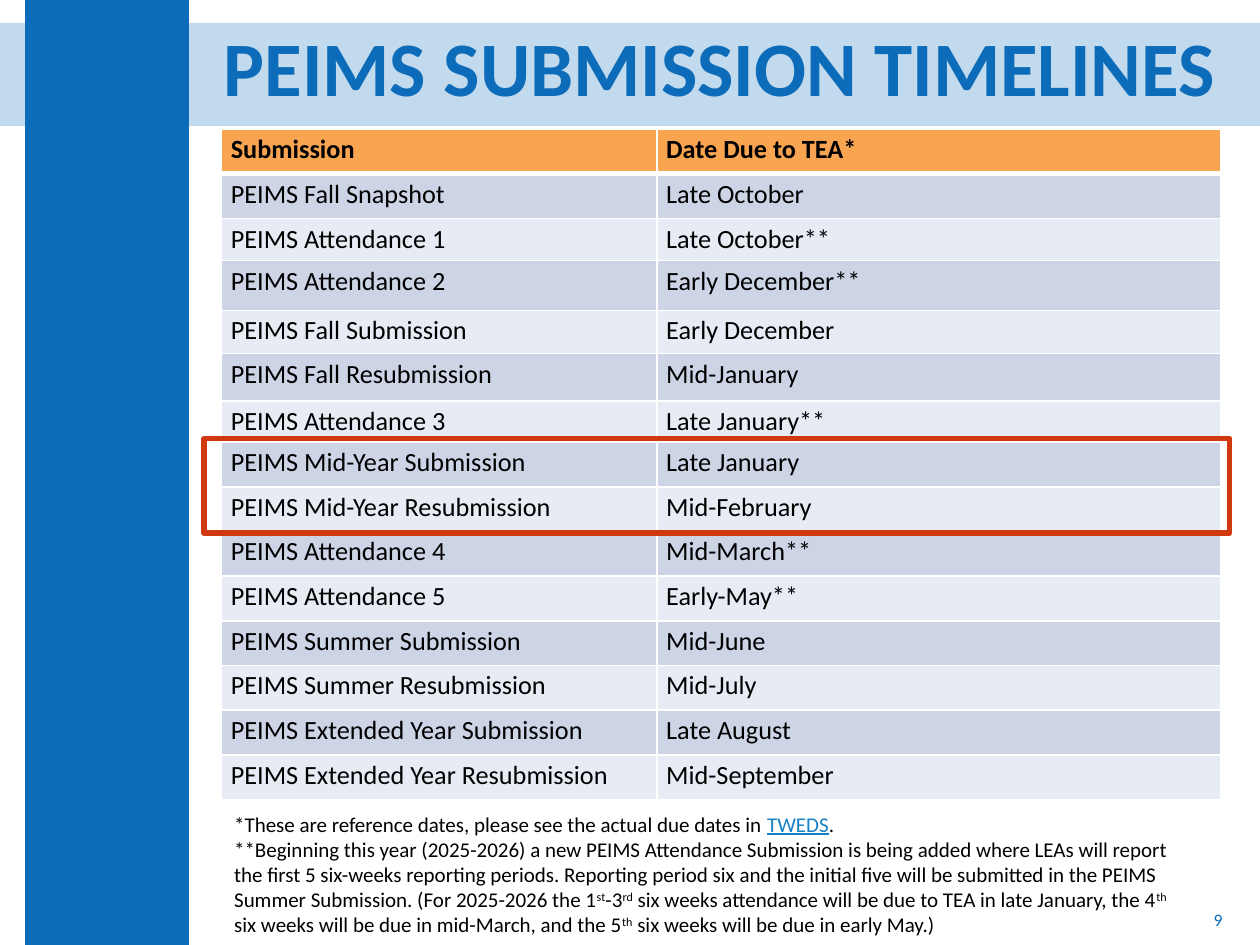
from typing import NamedTuple

from lxml import etree
from pptx import Presentation
from pptx.dml.color import RGBColor
from pptx.enum import shapes, text
from pptx.oxml import ns
from pptx.util import Pt

BLUE, ORANGE, RED, LINK = "0D6CB9", "F9A451", "D0380F", "1682C5"
DARK, LIGHT, BLACK, WHITE = "CCD4E6", "E7EBF3", "000000", "FFFFFF"


class Box(NamedTuple):
    x: float
    y: float
    w: float
    h: float


class Row(NamedTuple):
    name: str
    due: str
    high: float


class Bit(NamedTuple):
    words: str
    kind: str = ""


ROWS = [
    Row("Submission", "Date Due to TEA*", 25.7),
    Row("PEIMS Fall Snapshot", "Late October", 25.7),
    Row("PEIMS Attendance 1", "Late October**", 24),
    Row("PEIMS Attendance 2", "Early December**", 28.4),
    Row("PEIMS Fall Submission", "Early December", 24.8),
    Row("PEIMS Fall Resubmission", "Mid-January", 27),
    Row("PEIMS Attendance 3", "Late January**", 23.5),
    Row("PEIMS Mid-Year Submission", "Late January", 25.7),
    Row("PEIMS Mid-Year Resubmission", "Mid-February", 25.4),
    Row("PEIMS Attendance 4", "Mid-March**", 25.4),
    Row("PEIMS Attendance 5", "Early-May**", 25.7),
    Row("PEIMS Summer Submission", "Mid-June", 25.4),
    Row("PEIMS Summer Resubmission", "Mid-July", 25.6),
    Row("PEIMS Extended Year Submission", "Late August", 25.6),
    Row("PEIMS Extended Year Resubmission", "Mid-September", 25.6),
]

NOTES = [
    [
        Bit("*These are reference dates, please see the actual due dates in "),
        Bit("TWEDS", "link"),
        Bit("."),
    ],
    [
        Bit("**Beginning this year (2025-2026) a new PEIMS Attendance Submission "
            "is being added where LEAs will report the first 5 six-weeks reporting "
            "periods. Reporting period six and the initial five will be submitted "
            "in the PEIMS Summer Submission. (For 2025-2026 the 1"),
        Bit("st", "super"),
        Bit("-3"),
        Bit("rd", "super"),
        Bit(" six weeks attendance will be due to TEA in late January, the 4"),
        Bit("th", "super"),
        Bit(" six weeks will be due in mid-March, and the 5"),
        Bit("th", "super"),
        Bit(" six weeks will be due in early May.)"),
    ],
]


def paint(color, tone: str) -> None:
    color.rgb = RGBColor.from_string(tone)


def fill(thing, tone: str) -> None:
    thing.fill.solid()
    paint(thing.fill.fore_color, tone)


def style(font, size: float, tone: str = BLACK, bold: bool = False) -> None:
    font.name = "Calibri"
    font.size = Pt(size)
    font.bold = bold
    paint(font.color, tone)


def place(slide, box: Box):
    shape = slide.shapes.add_shape(shapes.MSO_SHAPE.RECTANGLE, *map(Pt, box))
    shape.shadow.inherit = False
    return shape


def band(slide, box: Box, alpha: int = 100) -> None:
    shape = place(slide, box)
    fill(shape, BLUE)
    shape.line.fill.background()
    if alpha < 100:
        tone = shape.fill._xPr.find(".//" + ns.qn("a:srgbClr"))
        etree.SubElement(tone, ns.qn("a:alpha")).set("val", str(alpha * 1000))


def frame(slide, box: Box) -> None:
    shape = place(slide, box)
    shape.fill.background()
    paint(shape.line.color, RED)
    shape.line.width = Pt(3)


def head(slide, box: Box) -> None:
    title = slide.shapes.title
    title.left, title.top, title.width, title.height = map(Pt, box)
    body = title.text_frame
    body.text = "PEIMS SUBMISSION TIMELINES"
    body.word_wrap = True
    body.auto_size = text.MSO_AUTO_SIZE.NONE
    body.vertical_anchor = text.MSO_ANCHOR.MIDDLE
    para = body.paragraphs[0]
    para.alignment = text.PP_ALIGN.CENTER
    para.line_spacing = 0.9
    style(para.runs[0].font, 44, BLUE, True)
    slide.shapes._spTree.append(title._element)


def edge(cell, row: int) -> None:
    props = cell._tc.get_or_add_tcPr()
    wide = {"L": 1, "R": 1, "T": 3 if row == 1 else 1, "B": 3 if row == 0 else 1}
    for spot, (side, size) in enumerate(wide.items()):
        line = etree.Element(ns.qn("a:ln" + side), w=str(Pt(size)))
        solid = etree.SubElement(line, ns.qn("a:solidFill"))
        etree.SubElement(solid, ns.qn("a:srgbClr")).set("val", WHITE)
        props.insert(spot, line)


def grid(slide, left: float, top: float, wide: list[float]) -> None:
    high = sum(row.high for row in ROWS)
    table = slide.shapes.add_table(
        len(ROWS), len(wide), *map(Pt, (left, top, sum(wide), high))).table
    for col, size in zip(table.columns, wide):
        col.width = Pt(size)
    for at, row in enumerate(ROWS):
        table.rows[at].height = Pt(row.high)
        tone = ORANGE if at == 0 else DARK if at % 2 else LIGHT
        for cell, words in zip(table.rows[at].cells, (row.name, row.due)):
            cell.margin_left = cell.margin_right = Pt(5.2)
            cell.margin_top = cell.margin_bottom = Pt(2.6)
            cell.text_frame.text = words
            style(cell.text_frame.paragraphs[0].runs[0].font, 15, bold=at == 0)
            fill(cell, tone)
            edge(cell, at)


def label(slide, box: Box):
    body = slide.shapes.add_textbox(*map(Pt, box)).text_frame
    body.word_wrap = True
    return body


def number(slide, box: Box) -> None:
    body = label(slide, box)
    body.text = "9"
    body.vertical_anchor = text.MSO_ANCHOR.MIDDLE
    para = body.paragraphs[0]
    para.alignment = text.PP_ALIGN.RIGHT
    style(para.runs[0].font, 10, BLUE)


def notes(slide, box: Box) -> None:
    body = label(slide, box)
    for at, bits in enumerate(NOTES):
        para = body.add_paragraph() if at else body.paragraphs[0]
        for bit in bits:
            run = para.add_run()
            run.text = bit.words
            style(run.font, 12, LINK if bit.kind == "link" else BLACK)
            if bit.kind == "link":
                run.font.underline = True
            if bit.kind == "super":
                run._r.get_or_add_rPr().set("baseline", "30000")


def main() -> None:
    deck = Presentation()
    deck.slide_width, deck.slide_height = Pt(720), Pt(540)
    slide = deck.slides.add_slide(deck.slide_layouts[5])
    band(slide, Box(0, 13, 720, 59), 25)
    band(slide, Box(14.4, 0, 93.6, 540))
    head(slide, Box(110.9, 23.8, 601.2, 33.8))
    grid(slide, 126.7, 73.6, [248.8, 322])
    number(slide, Box(543.6, 511.2, 162, 28.8))
    frame(slide, Box(116.6, 250.6, 586.1, 54))
    notes(slide, Box(126.7, 460, 553.7, 80))
    deck.save("out.pptx")


if __name__ == "__main__":
    main()
